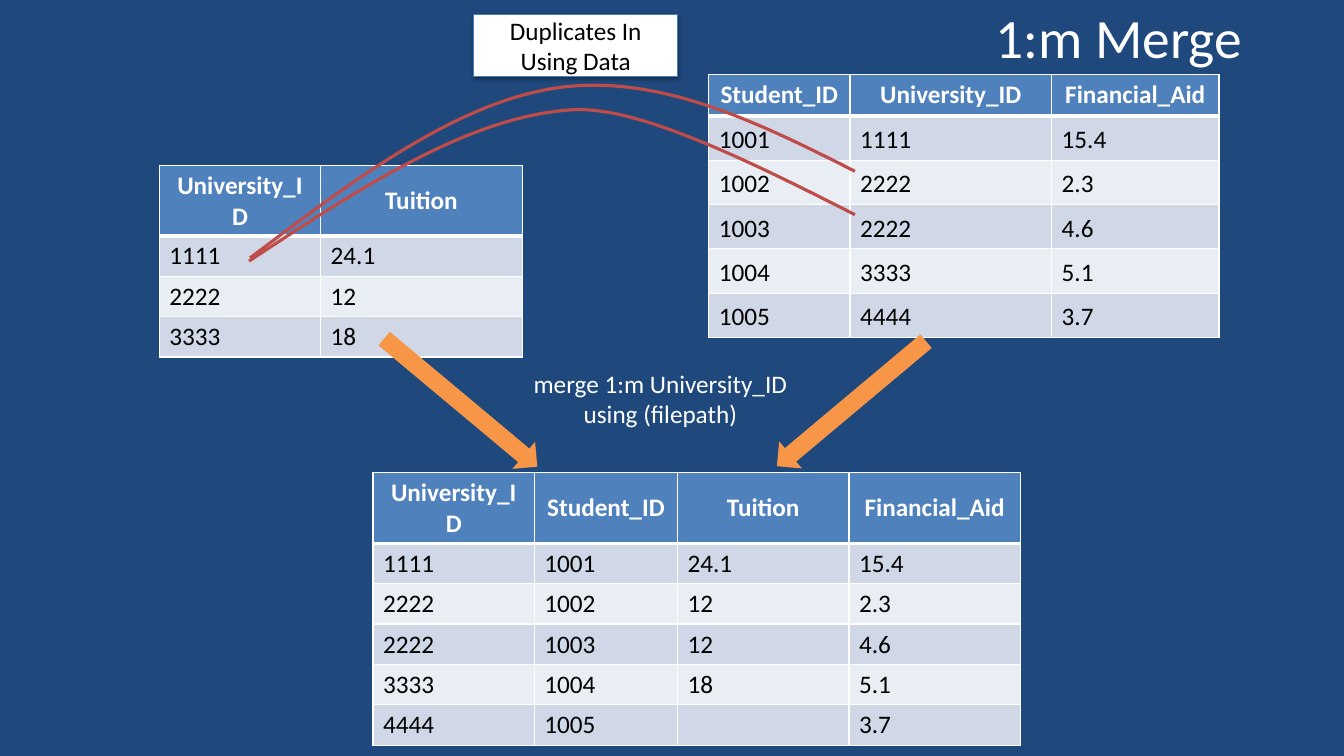
"""Build the slide that explains a 1:m merge with three tables."""
import pptx
import pptx.dml.color
import pptx.enum.shapes
import pptx.enum.text
import pptx.oxml
import pptx.oxml.ns
import pptx.util

WIDTH, HEIGHT = 13.33, 7.5
FONT = "Calibri"
COLORS = {
    "background": "1F497D", "white": "FFFFFF", "black": "000000",
    "header": "4F81BD", "odd": "D0D8E8", "even": "E9EDF4",
    "arrow": "F79646", "curve": "BF4C48", "callout": "4B7EBC",
}
TITLE = ("1:m Merge", (0.92, 0.03, 11.5, 0.66))
COMMAND = ("merge 1:m University_ID using (filepath)", (5.1, 3.6, 2.9, 0.68))
CALLOUT = ("Duplicates In Using Data", (4.7, 0.14, 2.02, 0.62))

TABLES = [
    {"corner": (7.03, 0.74), "columns": (1.4, 2, 1.66), "header": 0.41, "row": 0.44,
     "content": [("Student_ID", "University_ID", "Financial_Aid"),
                 ("1001", "1111", "15.4"),
                 ("1002", "2222", "2.3"),
                 ("1003", "2222", "4.6"),
                 ("1004", "3333", "5.1"),
                 ("1005", "4444", "3.7")]},
    {"corner": (1.58, 1.64), "columns": (1.6, 2), "header": 0.41, "row": 0.4,
     "content": [("University_ID", "Tuition"),
                 ("1111", "24.1"),
                 ("2222", "12"),
                 ("3333", "18")]},
    {"corner": (3.7, 4.69), "columns": (1.6, 1.42, 1.7, 1.7), "header": 0.41, "row": 0.4,
     "content": [("University_ID", "Student_ID", "Tuition", "Financial_Aid"),
                 ("1111", "1001", "24.1", "15.4"),
                 ("2222", "1002", "12", "2.3"),
                 ("2222", "1003", "12", "4.6"),
                 ("3333", "1004", "18", "5.1"),
                 ("4444", "1005", "", "3.7")]},
]
ARROWS = [((3.58, 3.82, 1.98, 0.35), 39.9), ((7.48, 3.83, 1.93, 0.35), 140)]
LOWER_CURVE = [(2.47, 2.59), (3.55, 1.88), (4.63, 1.16), (5.66, 1.09),
               (6.3, 1.04), (7.4, 1.58), (8.48, 2.13)]
UPPER_CURVE = [(2.48, 2.56), (3.5, 1.79), (4.53, 1.01), (5.54, 0.87),
               (6.55, 0.73), (7.55, 1.23), (8.48, 1.7)]
SHADOW = (
    f'<a:effectLst {pptx.oxml.ns.nsdecls("a")}>'
    '<a:outerShdw blurRad="39370" dist="22860" dir="5400000" rotWithShape="0">'
    '<a:srgbClr val="000000"><a:alpha val="35000"/></a:srgbClr>'
    '</a:outerShdw></a:effectLst>'
)
HEADER_RULE = (
    f'<a:lnB {pptx.oxml.ns.nsdecls("a")} w="38100"><a:solidFill>'
    f'<a:srgbClr val="{COLORS["white"]}"/></a:solidFill></a:lnB>'
)
ALIGN = pptx.enum.text.PP_ALIGN
ANCHOR = pptx.enum.text.MSO_ANCHOR
SHAPE = pptx.enum.shapes.MSO_SHAPE


def inches(lengths):
    return [pptx.util.Inches(length) for length in lengths]


def rgb(name):
    return pptx.dml.color.RGBColor.from_string(COLORS[name])


def paint(fill, color):
    fill.solid()
    fill.fore_color.rgb = rgb(color)


def write(frame, text, color, align, size=18, bold=False):
    frame.text = text
    paragraph = frame.paragraphs[0]
    paragraph.alignment = align
    font = paragraph.font
    font.name, font.size, font.bold = FONT, pptx.util.Pt(size), bold
    font.color.rgb = rgb(color)


def add_label(slide, label, align, anchor, size=18):
    text, box = label
    frame = slide.shapes.add_textbox(*inches(box)).text_frame
    frame.word_wrap = True
    frame.vertical_anchor = anchor
    write(frame, text, "white", align, size)


def add_data_table(slide, data):
    content, columns = data["content"], data["columns"]
    heights = [data["header"]] + [data["row"]] * (len(content) - 1)
    box = (*data["corner"], sum(columns), sum(heights))
    table = slide.shapes.add_table(len(content), len(columns), *inches(box)).table
    for column, width in zip(table.columns, inches(columns)):
        column.width = width
    for r, (row, height, values) in enumerate(zip(table.rows, inches(heights), content)):
        row.height = height
        for cell, value in zip(row.cells, values):
            if r == 0:
                paint(cell.fill, "header")
                cell.vertical_anchor = ANCHOR.MIDDLE
                write(cell.text_frame, value, "white", ALIGN.CENTER, bold=True)
                for properties in cell.text_frame._txBody.xpath("../a:tcPr"):
                    properties.insert(0, pptx.oxml.parse_xml(HEADER_RULE))
            else:
                paint(cell.fill, "odd" if r % 2 else "even")
                cell.vertical_anchor = ANCHOR.BOTTOM
                write(cell.text_frame, value, "black", ALIGN.LEFT)


def add_arrow(slide, box, angle):
    arrow = slide.shapes.add_shape(SHAPE.RIGHT_ARROW, *inches(box))
    arrow.rotation = angle
    arrow.shadow.inherit = False
    paint(arrow.fill, "arrow")
    arrow.line.fill.background()


def add_curve(slide, points):
    start, *controls = [tuple(inches(point)) for point in points]
    builder = slide.shapes.build_freeform(*start)
    builder.add_line_segments(controls, close=False)
    curve = builder.convert_to_shape()
    curve.shadow.inherit = False
    curve.fill.background()
    curve.line.color.rgb = rgb("curve")
    curve.line.width = pptx.util.Pt(2.25)
    segments = curve.element.xpath(".//a:lnTo")
    for first in range(0, len(segments), 3):
        bezier = pptx.oxml.parse_xml(f'<a:cubicBezTo {pptx.oxml.ns.nsdecls("a")}/>')
        segments[first].addprevious(bezier)
        for segment in segments[first:first + 3]:
            bezier.append(segment[0])
            segment.getparent().remove(segment)


def add_callout(slide):
    text, box = CALLOUT
    callout = slide.shapes.add_shape(SHAPE.RECTANGLE, *inches(box))
    paint(callout.fill, "white")
    callout.line.color.rgb = rgb("callout")
    callout.line.width = pptx.util.Pt(0.75)
    callout.element.spPr.append(pptx.oxml.parse_xml(SHADOW))
    callout.text_frame.word_wrap = True
    callout.text_frame.vertical_anchor = ANCHOR.MIDDLE
    write(callout.text_frame, text, "black", ALIGN.CENTER)


def main():
    deck = pptx.Presentation()
    deck.slide_width, deck.slide_height = inches((WIDTH, HEIGHT))
    slide = deck.slides.add_slide(deck.slide_layouts[6])
    paint(slide.background.fill, "background")
    add_label(slide, TITLE, ALIGN.RIGHT, ANCHOR.MIDDLE, 39.6)
    for data in TABLES:
        add_data_table(slide, data)
    for box, angle in ARROWS:
        add_arrow(slide, box, angle)
    add_label(slide, COMMAND, ALIGN.CENTER, ANCHOR.TOP)
    add_curve(slide, LOWER_CURVE)
    add_callout(slide)
    add_curve(slide, UPPER_CURVE)
    deck.save("out.pptx")


if __name__ == "__main__":
    main()
